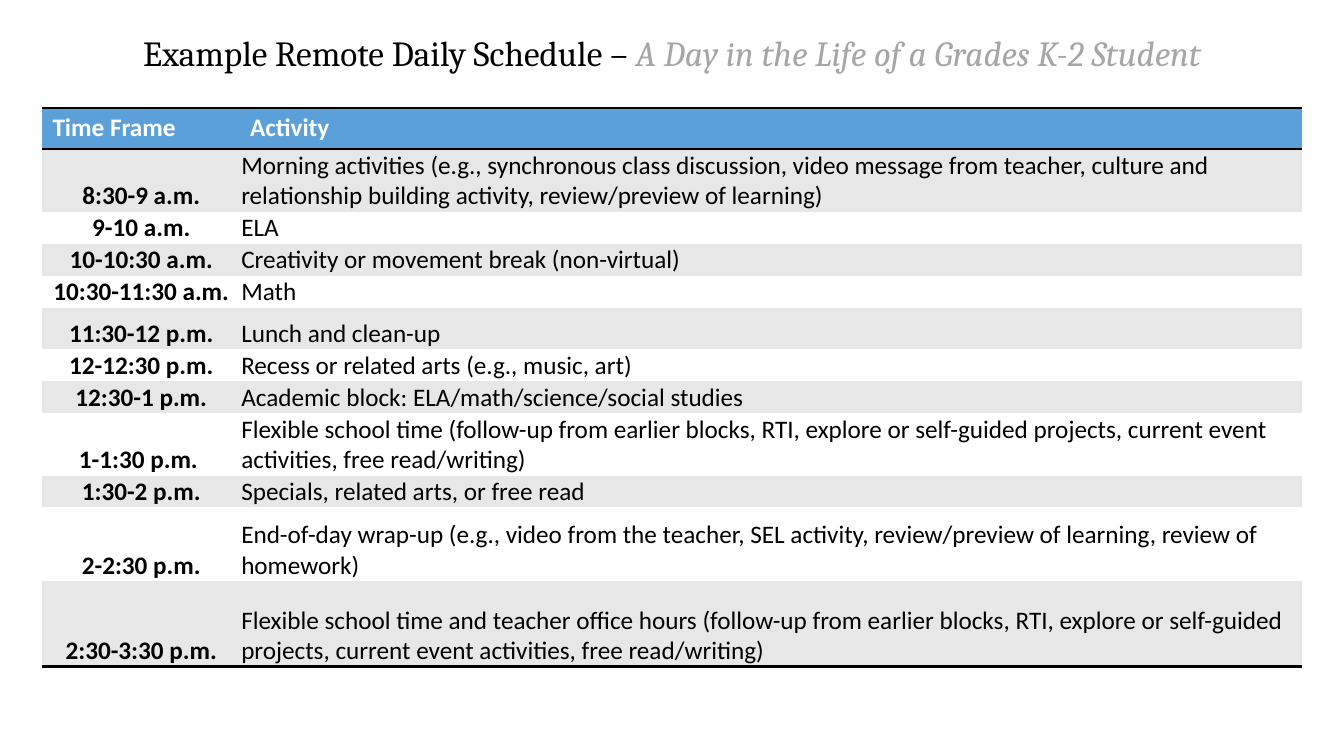
from dataclasses import dataclass

from lxml import etree
from pptx import Presentation
from pptx.dml.color import RGBColor
from pptx.enum import text as t
from pptx.oxml import ns
from pptx.util import Cm, Pt


@dataclass
class Slot:
    time: str
    task: str
    high: float = 0.76


SLOTS = [
    Slot("8:30-9 a.m.", "Morning activities (e.g., synchronous class discussion, video message from teacher, "
         "culture and relationship building activity, review/preview of learning)", 1.5),
    Slot("9-10 a.m.", "ELA"),
    Slot("10-10:30 a.m.", "Creativity or movement break (non-virtual)"),
    Slot("10:30-11:30 a.m.", "Math"),
    Slot("11:30-12 p.m.", "Lunch and clean-up", 1.04),
    Slot("12-12:30 p.m.", "Recess or related arts (e.g., music, art)"),
    Slot("12:30-1 p.m.", "Academic block: ELA/math/science/social studies"),
    Slot("1-1:30 p.m. ", "Flexible school time (follow-up from earlier blocks, RTI, explore or self-guided "
         "projects, current event\nactivities, free read/writing)", 1.52),
    Slot("1:30-2 p.m.", "Specials, related arts, or free read"),
    Slot("2-2:30 p.m.", "End-of-day wrap-up (e.g., video from the teacher, SEL activity, review/preview of "
         "learning, review of\nhomework)", 1.85),
    Slot("2:30-3:30 p.m.", "Flexible school time and teacher office hours (follow-up from earlier blocks, RTI, "
         "explore or self-guided\nprojects, current event activities, free read/writing)", 2.16),
]
ROWS = [Slot("Time Frame", "Activity", 1.0)] + SLOTS
RULES = {0, 1, len(ROWS)}
WIDTHS = [4.98, 26.77]
INSET = {"margin_left": Cm(0.03), "margin_right": Cm(0.03), "margin_top": Cm(0.03),
         "margin_bottom": 0, "vertical_anchor": t.MSO_ANCHOR.BOTTOM}


def put(obj: object, form: dict) -> None:
    for key, val in form.items():
        setattr(obj, key, val)


def tint(item: object, code: str) -> None:
    item.rgb = RGBColor.from_string(code)


def edge(cell: object, sides: set) -> None:
    props = cell._tc.get_or_add_tcPr()
    for side in "LRTB":
        line = etree.SubElement(props, ns.qn(f"a:ln{side}"), w=str(Pt(2)))
        if side in sides:
            fill = etree.SubElement(line, ns.qn("a:solidFill"))
            etree.SubElement(fill, ns.qn("a:srgbClr"), val="000000")
        else:
            etree.SubElement(line, ns.qn("a:noFill"))


def title(slide: object) -> None:
    head = slide.shapes.title
    put(head, {"left": Cm(2.34), "top": Cm(0.3), "width": Cm(29.2), "height": Cm(2.18)})
    put(head.text_frame, {"vertical_anchor": t.MSO_ANCHOR.MIDDLE, "word_wrap": True,
                          "auto_size": t.MSO_AUTO_SIZE.NONE})
    para = head.text_frame.paragraphs[0]
    put(para, {"alignment": t.PP_ALIGN.CENTER, "line_spacing": 0.9})
    for words, code, slant in [("Example Remote Daily Schedule – ", "000000", False),
                               ("A Day in the Life of a Grades K-2 Student", "A6A6A6", True)]:
        run = para.add_run()
        run.text = words
        put(run.font, {"name": "Cambria", "size": Pt(25.2), "italic": slant})
        tint(run.font.color, code)


def entry(cell: object, words: str, row: int, col: int) -> None:
    cell.text = words
    edge(cell, {side for side, rule in (("T", row), ("B", row + 1)) if rule in RULES})
    cell.fill.solid()
    tint(cell.fill.fore_color, "5CA0DA" if row == 0 else "E7E7E7" if row % 2 else "FFFFFF")
    if row:
        put(cell, INSET)
    for para in cell.text_frame.paragraphs:
        para.alignment = t.PP_ALIGN.CENTER if row and col == 0 else t.PP_ALIGN.LEFT
        for run in para.runs:
            put(run.font, {"name": "Calibri", "size": Pt(18), "bold": row == 0 or col == 0})
            tint(run.font.color, "000000" if row else "FFFFFF")


def grid(slide: object) -> None:
    high = sum(slot.high for slot in ROWS)
    table = slide.shapes.add_table(len(ROWS), len(WIDTHS), Cm(1.07), Cm(2.72),
                                   Cm(sum(WIDTHS)), Cm(high)).table
    put(table, {"first_row": False, "horz_banding": False})
    for col, width in zip(table.columns, WIDTHS):
        col.width = Cm(width)
    for row, slot in enumerate(ROWS):
        table.rows[row].height = Cm(slot.high)
        for col, words in enumerate((slot.time, slot.task)):
            entry(table.cell(row, col), words, row, col)


def main() -> None:
    deck = Presentation()
    put(deck, {"slide_width": Cm(33.87), "slide_height": Cm(19.05)})
    slide = deck.slides.add_slide(deck.slide_layouts[5])
    title(slide)
    grid(slide)
    deck.save("out.pptx")


if __name__ == "__main__":
    main()
